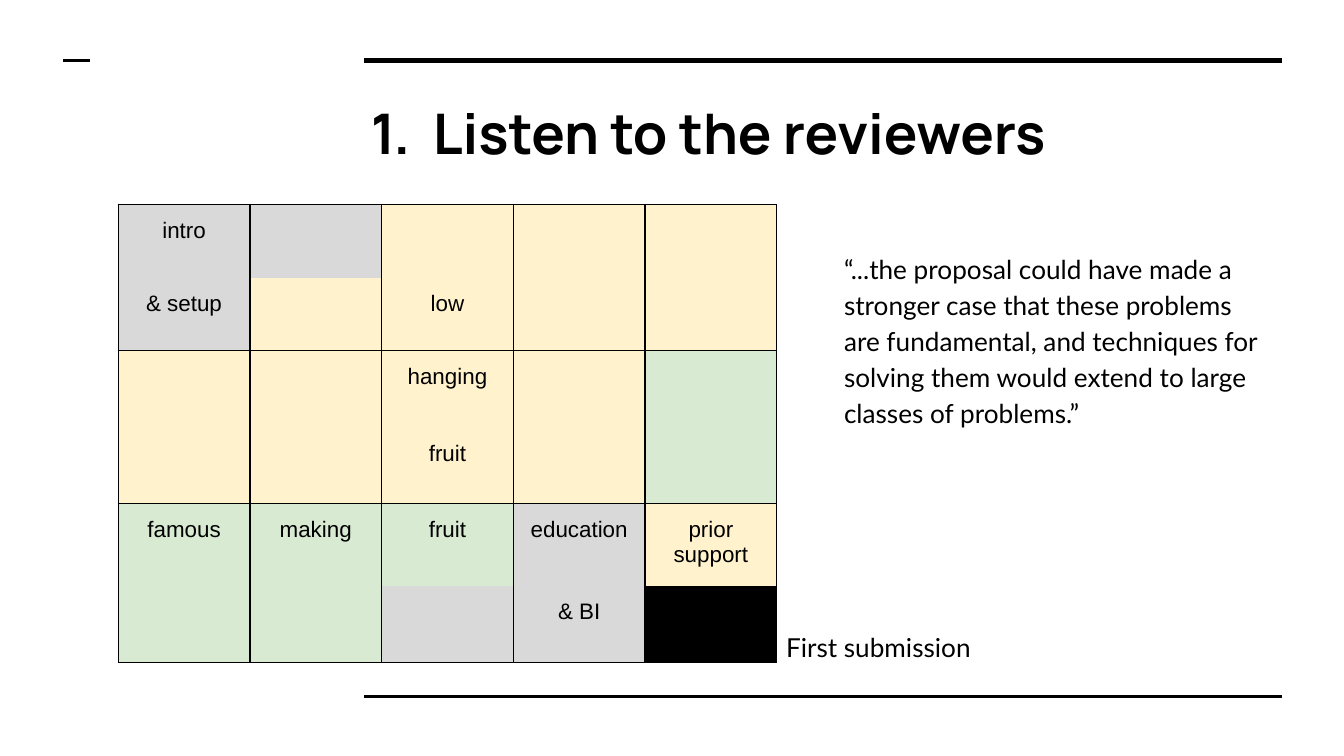
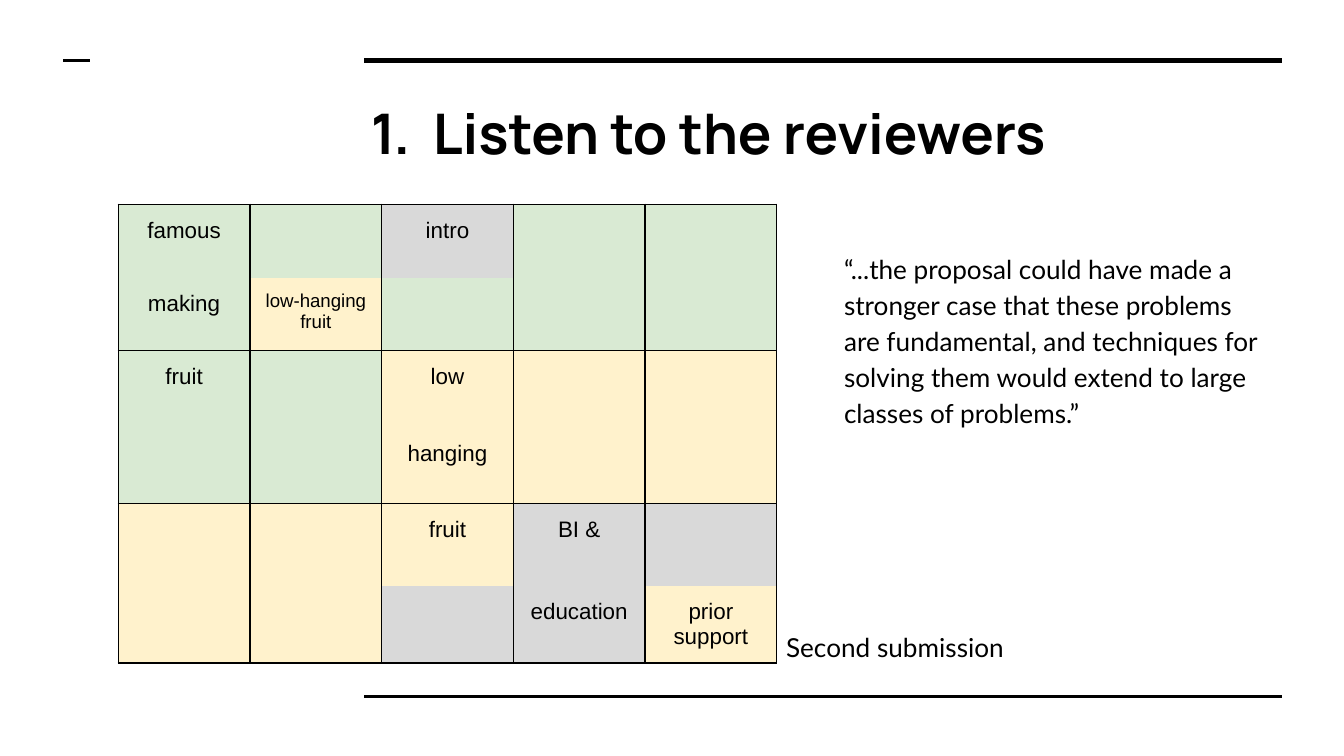
"""Builds two slides that compare the page plans of two proposal submissions."""
import lxml.etree
import pptx
import pptx.dml.color
import pptx.enum.shapes
import pptx.enum.text
import pptx.oxml
import pptx.oxml.ns
import pptx.util

TITLE = "Listen to the reviewers"
QUOTE = (
    "“...the proposal could have made a stronger case that these problems are "
    "fundamental, and techniques for solving them would extend to large classes of problems.”"
)
SUBMISSIONS = [
    {
        "caption": "First submission",
        "fills": ["ssyyy", "syyyy", "yyyyg", "yyyyg", "gggsy", "ggssk"],
        "labels": {
            (0, 0): "intro", (1, 0): "& setup", (1, 2): "low",
            (2, 2): "hanging", (3, 2): "fruit",
            (4, 0): "famous", (4, 1): "making", (4, 2): "fruit",
            (4, 3): "education", (4, 4): "prior support", (5, 3): "& BI",
        },
    },
    {
        "caption": "Second submission",
        "fills": ["ggsgg", "gyggg", "ggyyy", "ggyyy", "yyyss", "yyssy"],
        "labels": {
            (0, 0): "famous", (0, 2): "intro",
            (1, 0): "making", (1, 1): "low-hanging\nfruit",
            (2, 0): "fruit", (2, 2): "low", (3, 2): "hanging",
            (4, 2): "fruit", (4, 3): "BI &",
            (5, 3): "education", (5, 4): "prior support",
        },
    },
]

COLORS = {"ink": "000000", "s": "D9D9D9", "y": "FFF2CC", "g": "D9EAD3", "k": "000000"}
HEADING_FONT, BODY_FONT, TABLE_FONT = "Manrope", "Lato", "Arial"

PX = 4572
SLIDE_SIZE = (2000, 1125)
RULES = [(542, 1908, 90, 3), (542, 1908, 1036, 1.5), (94, 134, 90, 1.5)]
TITLE_BOX = (524, 126, 1382, 138)
BODY_BOX = (1236, 350, 672, 656)
CAPTION_BOX = (1150, 920, 504, 72)
TABLE_CORNER = (176, 304)
COLUMN_WIDTH = 196
ROW_HEIGHTS = [109, 109, 114, 114, 122, 114]
INSET = 20
PLAIN_TABLE_STYLE = "{2D5ABB26-0587-4C30-8999-92F81FD0307C}"


def px(*lengths):
    return [pptx.util.Emu(length * PX) for length in lengths]


def color(name):
    return pptx.dml.color.RGBColor.from_string(COLORS[name])


def xml(tag, content="", attributes=""):
    namespace = pptx.oxml.ns.nsdecls("a")
    return pptx.oxml.parse_xml(f"<a:{tag} {namespace} {attributes}>{content}</a:{tag}>")


def add_span(para, text, font, size, bold=False):
    span = para.add_run()
    span.text = text
    span.font.name = font
    span.font.size = pptx.util.Pt(size)
    span.font.bold = bold
    span.font.color.rgb = color("ink")


def prepare_box(box, place):
    box.left, box.top, box.width, box.height = px(*place)
    frame = box.text_frame
    frame.word_wrap = True
    frame.auto_size = pptx.enum.text.MSO_AUTO_SIZE.NONE
    frame.vertical_anchor = pptx.enum.text.MSO_ANCHOR.TOP
    frame.margin_left = frame.margin_top = frame.margin_right = frame.margin_bottom = px(INSET)[0]
    para = frame.paragraphs[0]
    para.alignment = pptx.enum.text.PP_ALIGN.LEFT
    para.space_before = pptx.util.Pt(0)
    return para


def set_bullet(para, left, indent, *marks):
    properties = para._p.get_or_add_pPr()
    properties.set("marL", str(left * PX))
    properties.set("indent", str(indent * PX))
    properties.extend(marks)


def add_rules(page, layout):
    for number, (start, end, y, weight) in enumerate(RULES, 20):
        rule = page.shapes.add_connector(
            pptx.enum.shapes.MSO_CONNECTOR.STRAIGHT, *px(start, y, end, y))
        rule.line.color.rgb = color("ink")
        rule.line.width = pptx.util.Pt(weight)
        rule.element.spPr.append(xml("effectLst"))
        rule.element.xpath(".//p:cNvPr")[0].set("id", str(number))
        layout.shapes.element.append(rule.element)


def add_texts(page, caption):
    para = prepare_box(page.shapes.add_textbox(*px(*CAPTION_BOX)), CAPTION_BOX)
    add_span(para, caption, BODY_FONT, 14)

    para = prepare_box(page.shapes.title, TITLE_BOX)
    ink = f'<a:srgbClr val="{COLORS["ink"]}"/>'
    set_bullet(
        para, 100, -92, xml("buClr", ink),
        xml("buFont", attributes=f'typeface="{HEADING_FONT}"'),
        xml("buAutoNum", attributes='type="arabicPeriod"'))
    add_span(para, TITLE, HEADING_FONT, 30, bold=True)

    para = prepare_box(page.placeholders[1], BODY_BOX)
    para.line_spacing = 1.15
    para.space_after = pptx.util.Pt(16)
    set_bullet(para, 0, 0, xml("buNone"))
    add_span(para, QUOTE, BODY_FONT, 14)


def format_cell(cell, row, fill, label):
    sides = ["lnL", "lnR"] + ["lnT"] * (row == 0) + ["lnB"] * (row % 2)
    line = f'<a:solidFill><a:srgbClr val="{COLORS["ink"]}"/></a:solidFill>'
    properties = cell._tc.get_or_add_tcPr()
    for side in sides:
        properties.append(xml(side, line, f'w="{pptx.util.Pt(0.75)}"'))
    cell.fill.solid()
    cell.fill.fore_color.rgb = color(fill)
    cell.margin_left = cell.margin_top = cell.margin_right = cell.margin_bottom = px(INSET)[0]
    if not label:
        return
    lines = label.split("\n")
    size = 10 if len(lines) > 1 else 12
    frame = cell.text_frame
    for index, text in enumerate(lines):
        para = frame.add_paragraph() if index else frame.paragraphs[0]
        para.alignment = pptx.enum.text.PP_ALIGN.CENTER
        add_span(para, text, TABLE_FONT, size)


def add_plan(page, fills, labels):
    columns = len(fills[0])
    holder = page.shapes.add_table(
        len(fills), columns,
        *px(*TABLE_CORNER, columns * COLUMN_WIDTH, sum(ROW_HEIGHTS)))
    holder.element.xpath(".//a:tableStyleId")[0].text = PLAIN_TABLE_STYLE
    table = holder.table
    table.first_row = table.horz_banding = False
    for column in table.columns:
        column.width = px(COLUMN_WIDTH)[0]
    for row, row_fills in enumerate(fills):
        table.rows[row].height = px(ROW_HEIGHTS[row])[0]
        for column, fill in enumerate(row_fills):
            format_cell(table.cell(row, column), row, fill, labels.get((row, column)))


def main():
    deck = pptx.Presentation()
    deck.slide_width, deck.slide_height = px(*SLIDE_SIZE)
    layout = deck.slide_layouts[1]
    for number, submission in enumerate(SUBMISSIONS):
        page = deck.slides.add_slide(layout)
        if number == 0:
            add_rules(page, layout)
        add_texts(page, submission["caption"])
        add_plan(page, submission["fills"], submission["labels"])
    deck.save("out.pptx")


if __name__ == "__main__":
    main()
